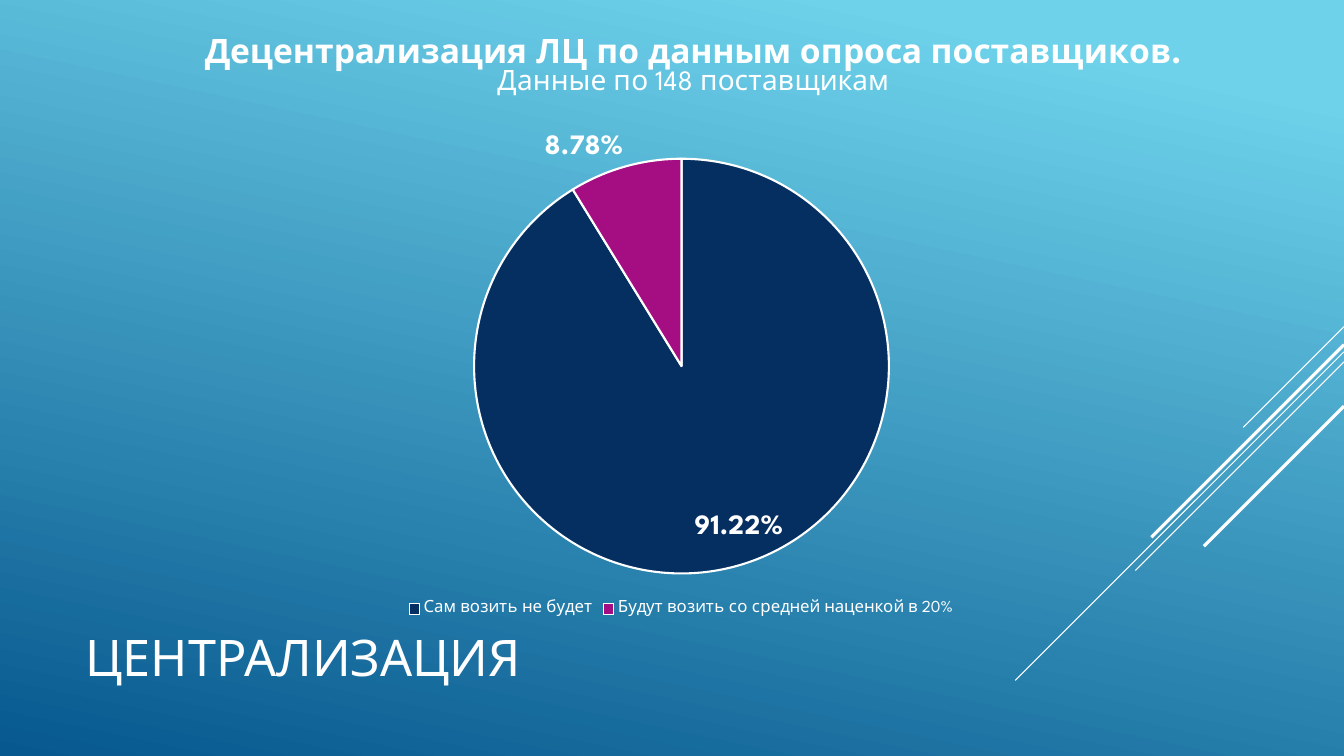
from pptx import Presentation
from pptx.chart.data import CategoryChartData
from pptx.dml.color import RGBColor
from pptx.enum.chart import XL_CHART_TYPE as Kind, XL_LABEL_POSITION as Spot, XL_LEGEND_POSITION as Side
from pptx.enum.shapes import MSO_CONNECTOR as Link
from pptx.enum.text import MSO_ANCHOR as Anchor, PP_ALIGN as Align
from pptx.oxml import parse_xml
from pptx.oxml.ns import nsdecls, qn
from pptx.util import Inches, Pt
from lxml import etree

COLORS = {"white": "FFFFFF", "sky": "6ED2EB", "deep": "06588E",
          "navy": "052F61", "plum": "A50E82"}
HUES = {name: RGBColor.from_string(code) for name, code in COLORS.items()}


def style(font, size, bold=False):
    for key, value in {"name": "League Spartan", "size": Pt(size), "bold": bold}.items():
        setattr(font, key, value)
    font.color.rgb = HUES["white"]


def place(node, index, **sizes):
    """Give a chart part a manual layout, in fractions of the chart."""
    for old in node.findall(qn("c:layout")):
        node.remove(old)
    target = '<c:layoutTarget val="inner"/>' if "w" in sizes else ""
    modes = "".join(f'<c:{key}Mode val="edge"/>' for key in "xy")
    marks = "".join(f'<c:{key} val="{value}"/>' for key, value in sizes.items())
    node.insert(index, parse_xml(
        f'<c:layout {nsdecls("c")}><c:manualLayout>{target}{modes}{marks}'
        '</c:manualLayout></c:layout>'))


deck = Presentation()
deck.slide_width, deck.slide_height = Inches(13.33), Inches(7.5)
slide = deck.slides.add_slide(deck.slide_layouts[5])

# Background
fill = slide.background.fill
fill.gradient()
fill.gradient_angle = 258
for stop, (spot, hue) in zip(fill.gradient_stops, [(0.1, "sky"), (1, "deep")]):
    stop.position = spot
    stop.color.rgb = HUES[hue]

# Diagonal rays: all start at the right edge and fall at 45 degrees
for top, run, width in [(3.24, 1, 0.75), (3.49, 3.26, 0.75), (3.59, 2.07, 0.75),
                        (3.42, 1.91, 2.25), (4.03, 1.39, 2.25)]:
    ray = slide.shapes.add_connector(Link.STRAIGHT, Inches(13.33), Inches(top),
                                     Inches(13.33 - run), Inches(top + run))
    ray.line.color.rgb = HUES["white"]
    ray.line.width = Pt(width)
    etree.SubElement(ray.element.spPr, qn("a:effectLst"))

# Slide title
title = slide.shapes.title
title.left, title.top, title.width, title.height = map(Inches, (0.75, 5.69, 9.71, 1.65))
frame = title.text_frame
frame.text = "ЦЕНТРАЛИЗАЦИЯ"
frame.vertical_anchor = Anchor.MIDDLE
frame.paragraphs[0].alignment = Align.LEFT
style(frame.paragraphs[0].runs[0].font, 36)

# Pie chart
data = CategoryChartData(number_format="0.00%")
data.categories = ["Сам возить не будет", "Будут возить со средней наценкой в 20%"]
data.add_series("Series 1", (0.9122, 0.0878))
chart = slide.shapes.add_chart(Kind.PIE, *map(Inches, (0.33, 0.35, 12.86, 5.81)), data).chart
style(chart.font, 10)

head = chart.chart_title.text_frame
head.text = "Децентрализация ЛЦ по данным опроса поставщиков."
head.add_paragraph().text = "Данные по 148 поставщикам"
for para, size, bold in zip(head.paragraphs, (24, 20), (True, False)):
    style(para.runs[0].font, size, bold)
chart.chart_title.include_in_layout = False

chart.has_legend = True
chart.legend.position = Side.BOTTOM
chart.legend.include_in_layout = False
style(chart.legend.font, 12)

plot = chart.plots[0]
plot.vary_by_categories = True
pie = plot.series[0]
for index, hue in enumerate(("navy", "plum")):
    slice_ = pie.points[index].format
    slice_.fill.solid()
    slice_.fill.fore_color.rgb = HUES[hue]
    slice_.line.color.rgb = HUES["white"]
    slice_.line.width = Pt(1.5)

labels = pie.data_labels
for key, value in {"show_value": True, "show_percentage": False, "number_format": "0.00%",
                   "number_format_is_linked": False, "position": Spot.BEST_FIT}.items():
    setattr(labels, key, value)
style(labels.font, 20, True)

root = chart.element
place(root.find(".//" + qn("c:title")), 1, x=0.13, y=0)
place(root.find(".//" + qn("c:plotArea")), 0, x=0.34, y=0.21, w=0.32, h=0.71)

deck.save("out.pptx")
